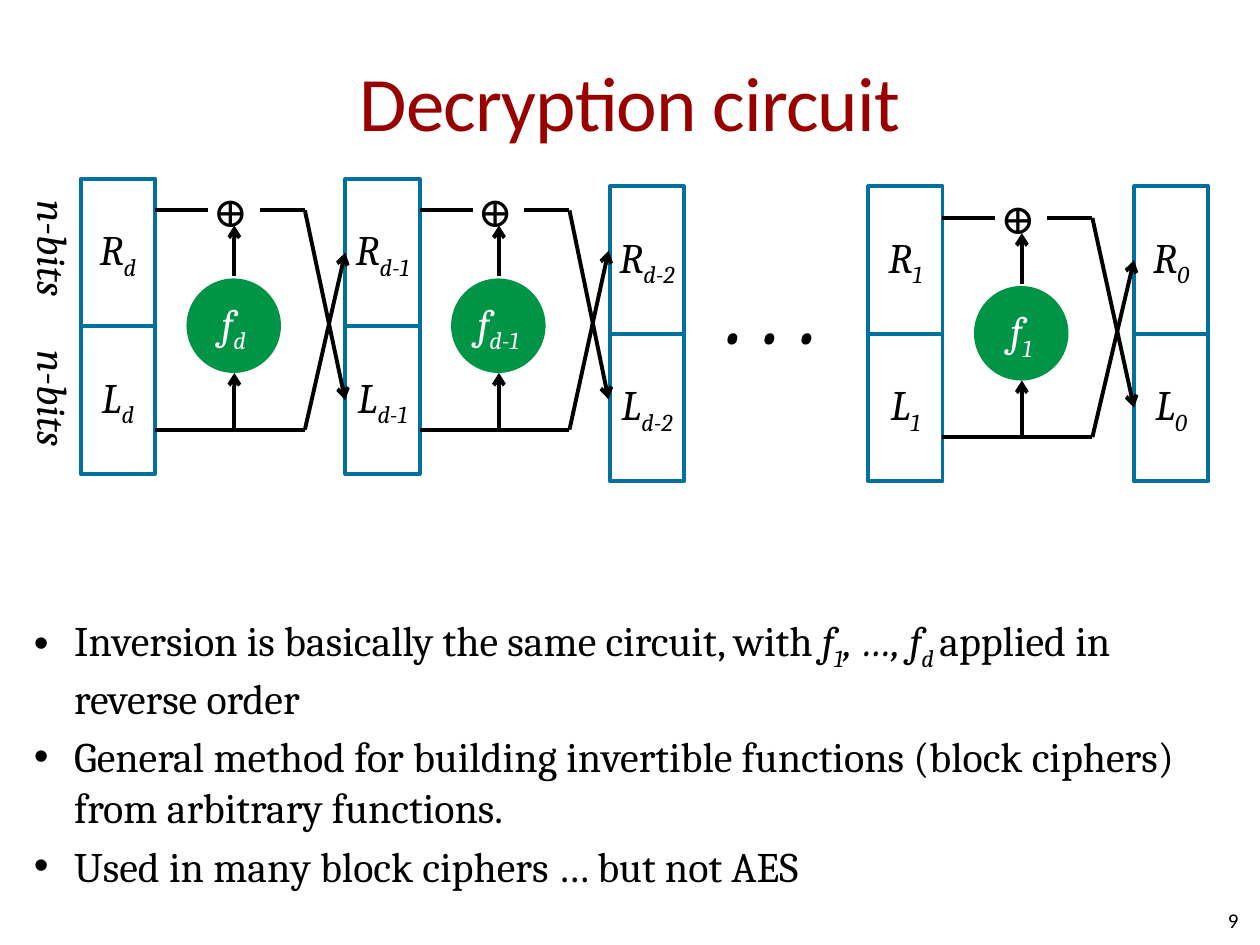
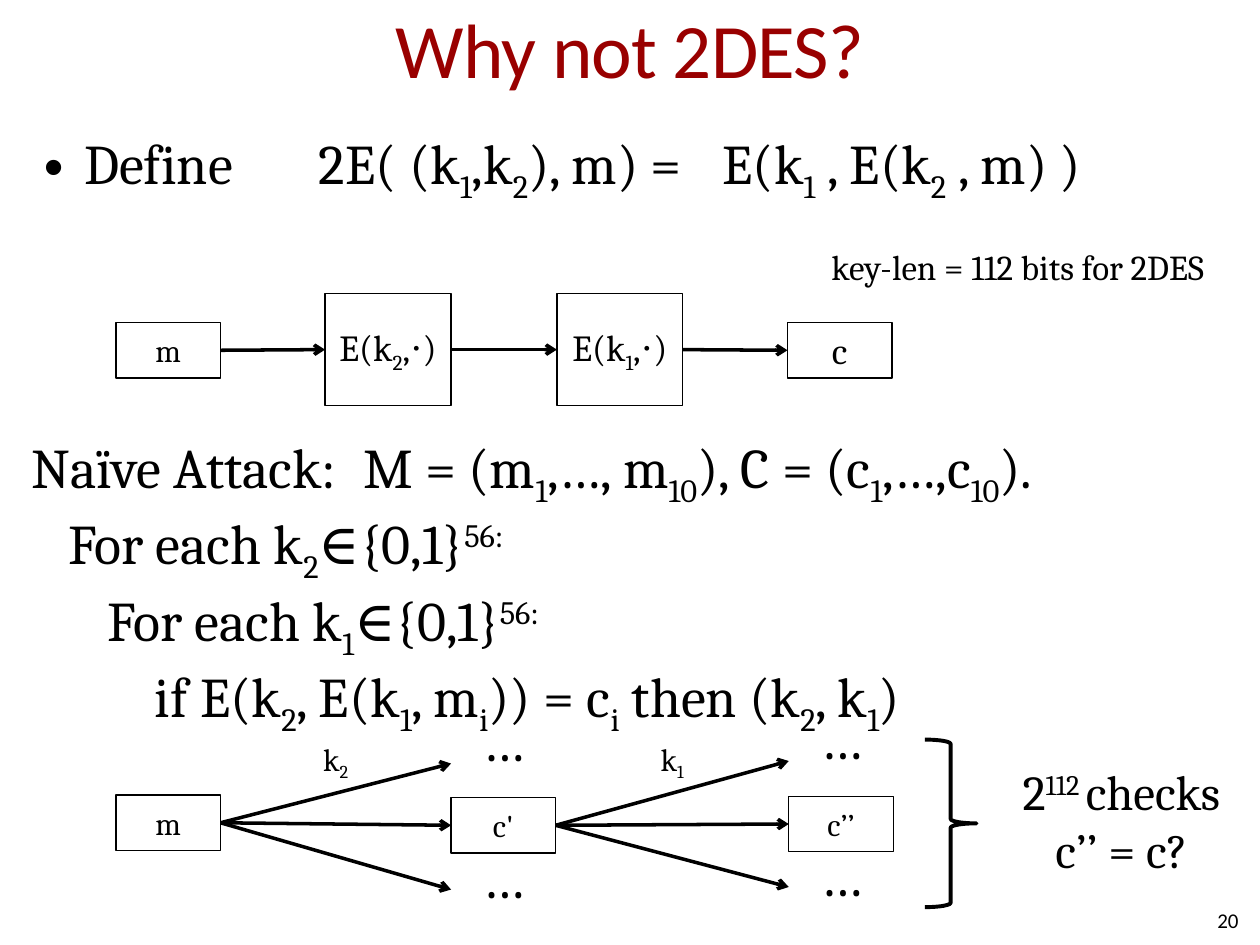
from pptx import Presentation
from pptx.dml.color import RGBColor
from pptx.enum.shapes import MSO_CONNECTOR, MSO_SHAPE
from pptx.enum.text import MSO_ANCHOR, PP_ALIGN
from pptx.oxml.ns import qn
from pptx.util import Inches, Pt
from lxml.etree import SubElement

BLACK, WHITE, RED, BLUE, GREEN = "000000", "FFFFFF", "990000", "00709E", "009446"
HEAD_FONT, BODY_FONT = "Calibri", "Cambria"
LEFT, CENTER, RIGHT = PP_ALIGN.LEFT, PP_ALIGN.CENTER, PP_ALIGN.RIGHT
TOP, MIDDLE = MSO_ANCHOR.TOP, MSO_ANCHOR.MIDDLE


def rgb(color):
    """Turn a hex string into a colour."""
    return RGBColor.from_string(color)


class Deck:
    """Hold the shared style and the current slide."""

    def __init__(self):
        """Start an empty 10 by 7.5 inch presentation."""
        self.prs = Presentation()
        self.prs.slide_width, self.prs.slide_height = Inches(10), Inches(7.5)
        self.s = None

    def slide(self, title, top, number):
        """Add a slide with its title and page number."""
        self.s = self.prs.slides.add_slide(self.prs.slide_layouts[6])
        self.text([title], 0.5, top, 9, 1.25, 44, RED, CENTER, MIDDLE,
                  inset=(0, 0.05), font=HEAD_FONT, spacing=-0.5)
        self.text([number], 7.5, 7.1, 2.33, 0.4, 12, align=RIGHT, anchor=MIDDLE, font=HEAD_FONT)

    def add_runs(self, p, markup, size, color, italic, font, spacing):
        """Fill a paragraph from parts split by |: / italic, _ sub, ^ super, ~ wide space."""
        for part in markup.split("|"):
            slanted = part.startswith("/")
            part = part[1:] if slanted else part
            mark = part[0] if part[0] in "_^~" else ""
            r = p.add_run()
            r.text = " " if mark == "~" else part[len(mark):]
            r.font.size, r.font.name = Pt(size), font
            r.font.italic = italic or slanted
            r.font.color.rgb = rgb(color)
            rPr = r._r.get_or_add_rPr()
            if mark in ("_", "^"):
                rPr.set("baseline", "-25000" if mark == "_" else "30000")
            extra = float(part[1:]) if mark == "~" else spacing
            if extra:
                rPr.set("spc", str(round(extra * 100)))

    def fill_text(self, sp, lines, size, color=BLACK, align=CENTER, anchor=MIDDLE, inset=(0, 0),
                  italic=False, wrap=True, font=BODY_FONT, spacing=0, indents=()):
        """Put the lines into a shape."""
        tf = sp.text_frame
        tf.word_wrap, tf.vertical_anchor = wrap, anchor
        tf.margin_left = tf.margin_right = Inches(inset[0])
        tf.margin_top = tf.margin_bottom = Inches(inset[1])
        for i, line in enumerate(lines):
            p = tf.add_paragraph() if i else tf.paragraphs[0]
            p.alignment = align
            self.add_runs(p, line, size, color, italic, font, spacing)
            if indents:
                p._p.get_or_add_pPr().set("marL", str(Inches(indents[i])))

    def text(self, lines, x, y, w, h, size, color=BLACK, align=LEFT, anchor=TOP, **style):
        """Add a text box."""
        sp = self.s.shapes.add_textbox(Inches(x), Inches(y), Inches(w), Inches(h))
        self.fill_text(sp, lines, size, color, align, anchor, **style)
        return sp

    def bullets(self, lines, x, y, w, h, size):
        """Add a bulleted text box."""
        sp = self.text(lines, x, y, w, h, size, inset=(0.1, 0.05))
        for p in sp.text_frame.paragraphs:
            p.space_before = Pt(size * 0.2)
            pPr = p._p.get_or_add_pPr()
            pPr.set("marL", str(Inches(0.32)))
            pPr.set("indent", str(-Inches(0.32)))
            SubElement(pPr, qn("a:buFont")).set("typeface", "Arial")
            SubElement(pPr, qn("a:buChar")).set("char", "•")

    def shape(self, kind, x, y, w, h, fill=None, line=None, width=0.75):
        """Add a preset shape."""
        sp = self.s.shapes.add_shape(kind, Inches(x), Inches(y), Inches(w), Inches(h))
        sp.shadow.inherit = False
        if fill:
            sp.fill.solid()
            sp.fill.fore_color.rgb = rgb(fill)
        else:
            sp.fill.background()
        if line:
            sp.line.color.rgb = rgb(line)
            sp.line.width = Pt(width)
        else:
            sp.line.fill.background()
        return sp

    def box(self, label, x, y, w=0.83, h=0.44, size=18):
        """Add a white box with a thin black outline."""
        sp = self.shape(MSO_SHAPE.RECTANGLE, x, y, w, h, WHITE, BLACK)
        self.fill_text(sp, [label], size, inset=(0.1, 0.05))
        return sp

    def register(self, label, x, y):
        """Add one half of a cipher state."""
        sp = self.shape(MSO_SHAPE.RECTANGLE, x, y, 0.59, 1.17, line=BLUE, width=2.25)
        self.fill_text(sp, [label], 24, italic=True)
        return sp

    def line(self, x1, y1, x2, y2, arrow=False, width=2.25, source=None, target=None):
        """Add a line that may leave a right side and enter a left side."""
        c = self.s.shapes.add_connector(MSO_CONNECTOR.STRAIGHT, Inches(x1), Inches(y1),
                                        Inches(x2), Inches(y2))
        if source:
            c.begin_connect(source, 3)
        if target:
            c.end_connect(target, 1)
        c.line.color.rgb = rgb(BLACK)
        c.line.width = Pt(width)
        if arrow:
            SubElement(c.element.spPr.get_or_add_ln(), qn("a:tailEnd")).set("type", "arrow")
        SubElement(c.element.spPr, qn("a:effectLst"))

    def feistel_round(self, key, x, y, right=None, left=None):
        """Draw the round function and wires beside the registers at x, y."""
        wire_top, wire_bottom, f_mid, bend, end = y + 0.25, y + 1.99, x + 1.22, x + 1.78, x + 2.09
        sp = self.shape(MSO_SHAPE.OVAL, x + 0.84, y + 0.79, 0.75, 0.75, GREEN)
        self.fill_text(sp, [f"f|_{key}"], 24, WHITE, italic=True)
        self.line(x + 0.59, wire_bottom, bend, wire_bottom)
        self.line(x + 0.59, wire_top, x + 1.01, wire_top)
        self.line(x + 1.42, wire_top, bend, wire_top)
        self.line(f_mid, wire_bottom, f_mid, y + 1.54, True)
        self.line(f_mid, y + 0.77, f_mid, y + 0.37, True)
        self.line(bend, wire_bottom, end, y + 0.57, True, target=right)
        self.line(bend, wire_top, end, y + 1.75, True, target=left)
        self.text(["⊕"], x + 1.05, y + 0.05, 0.33, 0.4, 24, wrap=False)

    def fan(self, x, y, source, target, end):
        """Draw three arrows spreading from one box, with dots above and below."""
        for dy in (-0.5, 0.5, 0):
            self.line(x, y, end, y + dy, True, 2, source, None if dy else target)
        for dy in (-0.96, 0.13):
            self.text(["…"], end + 0.25, y + dy, 0.83, 0.54, 32)


def decryption_circuit(d):
    """Build the decryption circuit slide."""
    d.slide("Decryption circuit", 0.17, "9")
    states = [("d", 0.64, 1.42), ("d-1", 2.74, 1.42), ("d-2", 4.84, 1.48),
              ("1", 6.89, 1.48), ("0", 9, 1.48)]
    halves = [(d.register(f"R|_{key}", x, y), d.register(f"L|_{key}", x, y + 1.17))
              for key, x, y in states]
    for i in (0, 1, 3):
        level = states[i][2] == states[i + 1][2]
        d.feistel_round(*states[i], *(halves[i + 1] if level else ()))
    for y in (1.59, 2.78):
        sp = d.text(["n-bits"], 0.23, y, 0.4, 0.8, 24, italic=True, wrap=False)
        sp.element.txBody.bodyPr.set("vert", "vert")
    d.text(["• • •"], 5.72, 2.38, 0.8, 0.54, 32, italic=True, wrap=False)
    d.bullets([
        "Inversion is basically the same circuit, with |/f|/_1|/, …, f|/_d |applied in reverse order",
        "General method for building invertible functions (block ciphers) from arbitrary functions.",
        "Used in many block ciphers … but not AES"], 0.17, 4.83, 9.67, 2.58, 24)


def double_des(d):
    """Build the 2DES slide."""
    d.slide("Why not 2DES?", -0.25, "20")
    d.bullets(["Define|~42|2E( (k|_1|,k|_2|), m) =|~16|E(k|_1| , E(k|_2| , m) )"],
              0.25, 0.97, 9.5, 1, 32)
    d.text(["key-len = 112 bits for 2DES"], 6.5, 1.9, 3.46, 0.44, 20, inset=(0.1, 0.05), wrap=False)

    chain = [d.box("m", 0.92, 2.56),
             d.box("E(k|_2|,⋅)", 2.58, 2.33, 1, 0.89, 21),
             d.box("E(k|_1|,⋅)", 4.42, 2.33, 1, 0.89, 21),
             d.box("c", 6.25, 2.56, size=21)]
    for source, target in zip(chain, chain[1:]):
        d.line(0, 0, 1, 0, True, 2, source, target)

    d.text(["Naïve Attack:|~8|M = (m|_1|,…, m|_10|), C = (c|_1|,…,c|_10|).",
            "For each k|_2|∈{0,1}|^56:",
            "For each k|_1|∈{0,1}|^56:",
            "if E(k|_2|, E(k|_1|, m|_i|)) = c|_i| then (k|_2|, k|_1|)"],
           0.25, 3.43, 8.5, 2.15, 32, indents=(0, 0.29, 0.6, 0.98))

    m = d.box("m", 0.92, 6.31)
    c1 = d.box("c'", 3.58, 6.33)
    c2 = d.box("c’’", 6.26, 6.32)
    d.fan(1.75, 6.56, m, c1, 3.58)
    d.fan(4.42, 6.54, c1, c2, 6.26)
    for key, x in (("2", 2.25), ("1", 4.92)):
        d.text([f"k|_{key}"], x, 5.82, 0.83, 0.44, 18, align=CENTER, anchor=MIDDLE,
               inset=(0.1, 0.05))
    d.shape(MSO_SHAPE.RIGHT_BRACE, 7.34, 5.87, 0.41, 1.33, line=BLACK, width=2.25)
    d.text(["2|^112 |checks", "c’’ = c?"], 7.92, 6.04, 1.96, 0.94, 28, align=CENTER)


def main():
    """Build and save the presentation."""
    d = Deck()
    decryption_circuit(d)
    double_des(d)
    d.prs.save("out.pptx")


if __name__ == "__main__":
    main()
